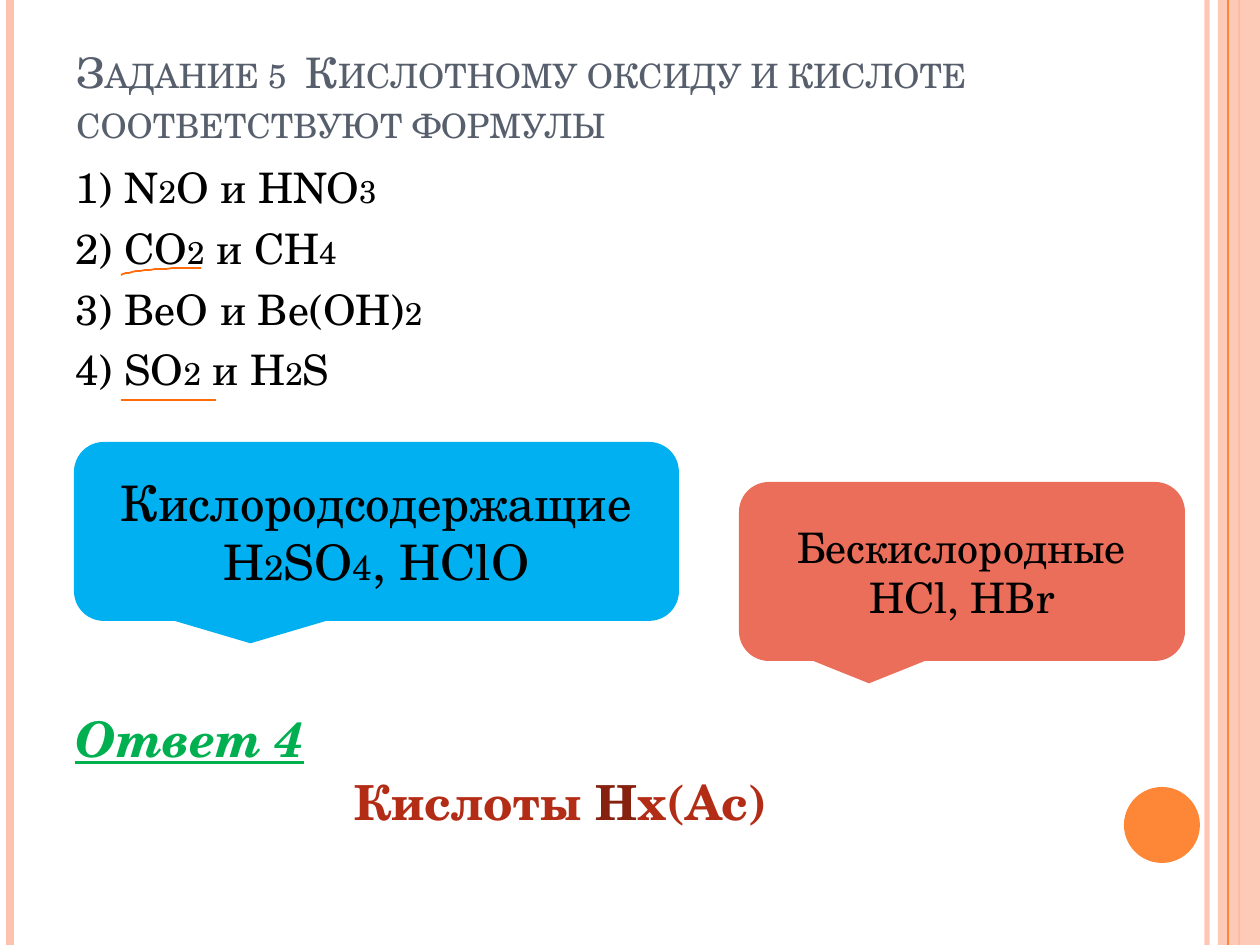
from dataclasses import dataclass

from lxml.etree import SubElement
from pptx import Presentation
from pptx.dml.color import RGBColor
from pptx.enum.shapes import MSO_CONNECTOR, MSO_SHAPE
from pptx.enum.text import MSO_ANCHOR, PP_ALIGN
from pptx.oxml.ns import qn
from pptx.util import Pt

PX = 914400 / 126


@dataclass(frozen=True)
class Theme:
    font: str = "TeX Gyre Schola"
    ink: str = "000000"
    title: str = "575F6D"
    peach: str = "FEC3AE"
    orange: str = "FE8637"
    mark: str = "FF6B0A"
    oxygen: str = "00B0F0"
    no_oxygen: str = "EB6E5A"
    answer: str = "00B050"
    acid: str = "B32C16"
    acid_dark: str = "862110"
    body_size: float = 24
    body_index: float = 18
    large_size: float = 28
    large_index: float = 20
    acid_size: float = 27.6


THEME = Theme()


def px(*lengths):
    return [round(length * PX) for length in lengths]


def rgb(value):
    return RGBColor.from_string(value)


def set_opacity(element, percent):
    color = next(element.iter(qn("a:srgbClr")))
    SubElement(color, qn("a:alpha"), val=str(percent * 1000))


def add_run(paragraph, text, size, color=THEME.ink, bold=False):
    run = paragraph.add_run()
    run.text = text
    run.font.name = THEME.font
    run.font.size = Pt(size)
    run.font.bold = bold
    run.font.color.rgb = rgb(color)
    return run


def add_formula(paragraph, formula, size, index_size):
    """Add a formula in which an underscore makes the next digit smaller."""
    first, *rest = formula.split("_")
    add_run(paragraph, first, size)
    for part in rest:
        add_run(paragraph, part[0], index_size)
        if part[1:]:
            add_run(paragraph, part[1:], size)


def add_text_box(slide, *box, anchor=MSO_ANCHOR.TOP):
    frame = slide.shapes.add_textbox(*px(*box)).text_frame
    frame.word_wrap = True
    frame.vertical_anchor = anchor
    return frame


def add_formulas(frame, formulas, size, index_size, space=0, align=PP_ALIGN.LEFT):
    for number, formula in enumerate(formulas):
        paragraph = frame.add_paragraph() if number else frame.paragraphs[0]
        paragraph.alignment = align
        paragraph.space_before = Pt(space if number else 0)
        add_formula(paragraph, formula, size, index_size)


def add_shape(slide, kind, box, color):
    shape = slide.shapes.add_shape(kind, *px(*box))
    shape.shadow.inherit = False
    shape.fill.solid()
    shape.fill.fore_color.rgb = rgb(color)
    shape.line.fill.background()
    return shape


def add_line(slide, start, end, color, width):
    line = slide.shapes.add_connector(MSO_CONNECTOR.STRAIGHT, *px(*start, *end))
    line.line.color.rgb = rgb(color)
    line.line.width = Pt(width)
    SubElement(line._element.spPr, qn("a:effectLst"))
    return line


def add_curved_mark(slide, start, control, end, steps=16):
    """Draw an open stroke along a quadratic curve."""
    points = []
    for step in range(1, steps + 1):
        t = step / steps
        points.append(tuple(
            (1 - t) ** 2 * a + 2 * t * (1 - t) * b + t ** 2 * c
            for a, b, c in zip(start, control, end)))
    builder = slide.shapes.build_freeform(*start, scale=PX)
    builder.add_line_segments(points, close=False)
    mark = builder.convert_to_shape()
    mark.shadow.inherit = False
    mark.fill.background()
    mark.line.color.rgb = rgb(THEME.mark)
    mark.line.width = Pt(1)


def add_callout(slide, box, color, formulas, size, index_size):
    callout = add_shape(slide, MSO_SHAPE.ROUNDED_RECTANGULAR_CALLOUT, box, color)
    callout.text_frame.word_wrap = True
    callout.text_frame.vertical_anchor = MSO_ANCHOR.MIDDLE
    add_formulas(callout.text_frame, formulas, size, index_size, align=PP_ALIGN.CENTER)


def add_border(slide):
    def stripe(x, color, width):
        return add_line(slide, (x, 0), (x, 945), color, width)

    set_opacity(stripe(1207, THEME.peach, 3)._element, 93)
    stripe(10, THEME.peach, 4.5)
    stripe(1239, THEME.orange, 1.5)
    band = add_shape(slide, MSO_SHAPE.RECTANGLE, (1218, 0, 42, 945), THEME.peach)
    set_opacity(band._element, 87)
    stripe(1228, THEME.orange, 0.75)
    add_shape(slide, MSO_SHAPE.OVAL, (1124, 787, 76, 76), THEME.orange)


def add_title(slide):
    frame = add_text_box(slide, 64, 16, 1029, 137, anchor=MSO_ANCHOR.BOTTOM)
    run = add_run(
        frame.paragraphs[0],
        "Задание 5  Кислотному оксиду и кислоте соответствуют формулы",
        THEME.body_size, THEME.title)
    run.font._element.set("cap", "small")


def add_conclusions(slide):
    answer = add_text_box(slide, 63, 702, 488, 72).paragraphs[0]
    font = add_run(answer, "Ответ 4", THEME.large_size, THEME.answer, bold=True).font
    font.italic = font.underline = True

    acids = add_text_box(slide, 342, 766, 760, 72).paragraphs[0]
    for text, color in (("Кислоты ", THEME.acid), ("H", THEME.acid_dark),
                        ("x(Ac)", THEME.acid)):
        add_run(acids, text, THEME.acid_size, color, bold=True)


def main():
    presentation = Presentation()
    presentation.slide_width, presentation.slide_height = px(1260, 945)
    slide = presentation.slides.add_slide(presentation.slide_layouts[6])

    add_border(slide)
    add_title(slide)
    options = add_text_box(slide, 63, 155, 488, 268)
    add_formulas(
        options,
        ["1) N_2O и HNO_3", "2) CO_2 и CH_4", "3) BeO и Be(OH)_2", "4) SO_2 и H_2S"],
        THEME.body_size, THEME.body_index, space=6)
    add_conclusions(slide)
    add_callout(slide, (74, 442, 605, 179), THEME.oxygen,
                ["Кислородсодержащие", "H_2SO_4, HClO"],
                THEME.large_size, THEME.large_index)
    add_callout(slide, (739, 482, 446, 179), THEME.no_oxygen,
                ["Бескислородные", "HCl, HBr"],
                THEME.body_size, THEME.body_index)
    add_curved_mark(slide, (121, 275), (138, 268), (201, 268))
    add_line(slide, (121, 400), (216, 400), THEME.mark, 1)

    presentation.save("out.pptx")


if __name__ == "__main__":
    main()
